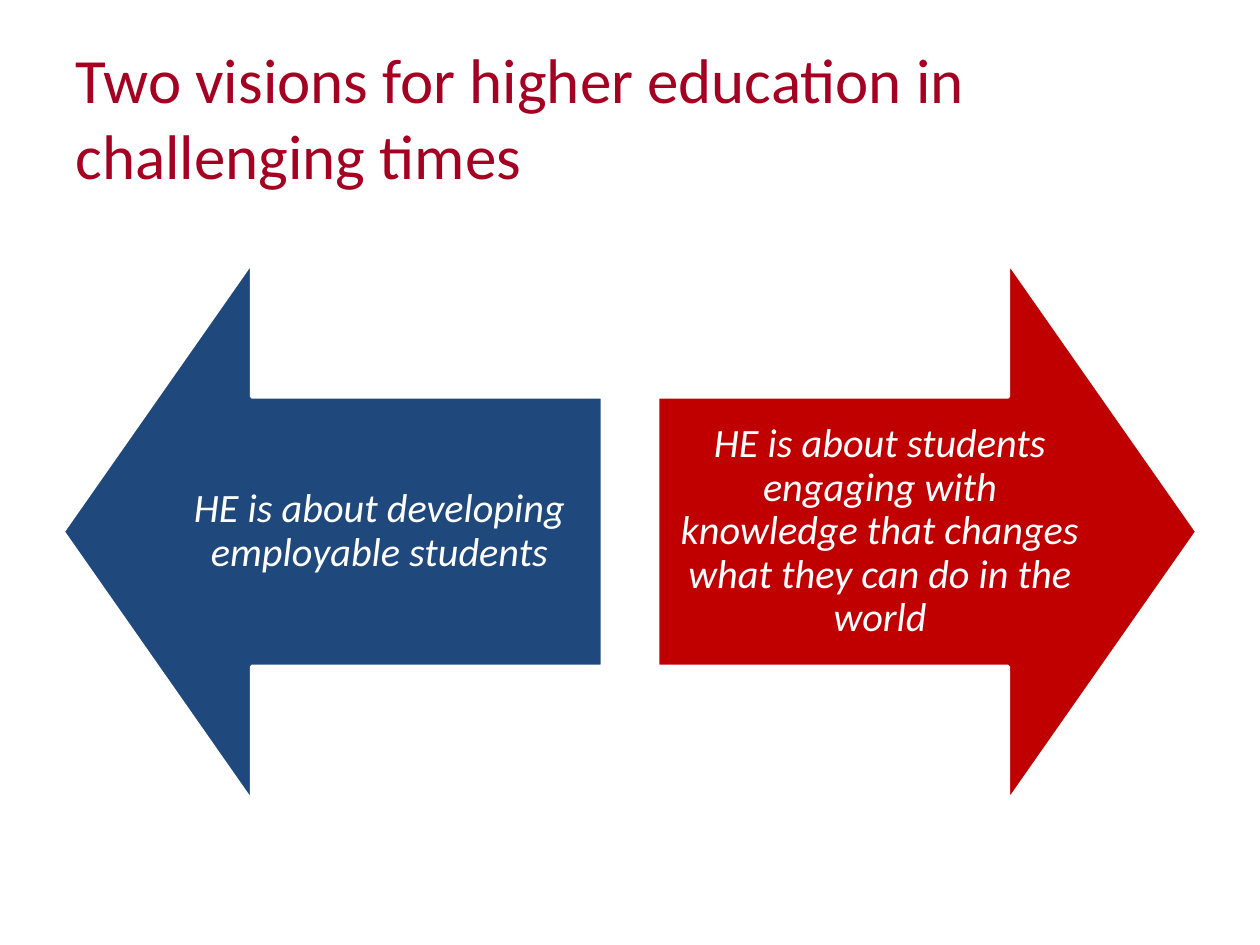
from pptx import Presentation
from pptx.dml.color import RGBColor
from pptx.enum.shapes import MSO_SHAPE
from pptx.enum.text import MSO_ANCHOR, PP_ALIGN
from pptx.util import Inches, Pt

LEFT_ARROW, RIGHT_ARROW = MSO_SHAPE.LEFT_ARROW, MSO_SHAPE.RIGHT_ARROW
MIDDLE = MSO_ANCHOR.MIDDLE
LEFT, CENTER = PP_ALIGN.LEFT, PP_ALIGN.CENTER

TITLE = "Two visions for higher education in challenging times"
VISIONS = [
    (LEFT_ARROW, "1F497D", "HE is about developing employable students"),
    (RIGHT_ARROW, "C00000", "HE is about students engaging with knowledge "
                            "that changes what they can do in the world"),
]

SLIDE_WIDTH, SLIDE_HEIGHT = 10, 7.5
MARGIN = 0.5
CONTENT_WIDTH = SLIDE_WIDTH - 2 * MARGIN
ARROW_SIZE = 4.28
ARROW_TOP = 2.08
ARROW_STEP = CONTENT_WIDTH - ARROW_SIZE
SHAFT_SHARE, HEAD_SHARE = 0.5, 0.35


def color(hex_value):
    return RGBColor.from_string(hex_value)


def write(shape, text, size, ink, align=LEFT, italic=False, spacing=1.0, inset=(0.1, 0.05)):
    frame = shape.text_frame
    frame.word_wrap = True
    frame.vertical_anchor = MIDDLE
    frame.margin_left = frame.margin_right = Inches(inset[0])
    frame.margin_top = frame.margin_bottom = Inches(inset[1])
    paragraph = frame.paragraphs[0]
    paragraph.alignment = align
    paragraph.line_spacing = spacing
    run = paragraph.add_run()
    run.text = text
    run.font.name = "Calibri"
    run.font.size = Pt(size)
    run.font.italic = italic
    run.font.color.rgb = color(ink)


def add_vision(slide, column, direction, fill, text):
    arrow = slide.shapes.add_shape(
        direction, Inches(MARGIN + column * ARROW_STEP), Inches(ARROW_TOP),
        Inches(ARROW_SIZE), Inches(ARROW_SIZE))
    arrow.adjustments[0] = SHAFT_SHARE
    arrow.adjustments[1] = HEAD_SHARE
    arrow.shadow.inherit = False
    arrow.fill.solid()
    arrow.fill.fore_color.rgb = color(fill)
    arrow.line.color.rgb = color("FFFFFF")
    arrow.line.width = Pt(2)
    write(arrow, text, 23, "FFFFFF", align=CENTER, italic=True, spacing=0.9, inset=(0.18, 0.18))


def main():
    deck = Presentation()
    deck.slide_width, deck.slide_height = Inches(SLIDE_WIDTH), Inches(SLIDE_HEIGHT)
    slide = deck.slides.add_slide(deck.slide_layouts[5])

    title = slide.shapes.title
    title.left, title.top = Inches(MARGIN), Inches(0.3)
    title.width, title.height = Inches(CONTENT_WIDTH), Inches(1.25)
    write(title, TITLE, 36, "A50021")

    for column, vision in enumerate(VISIONS):
        add_vision(slide, column, *vision)

    deck.save("out.pptx")


if __name__ == "__main__":
    main()
